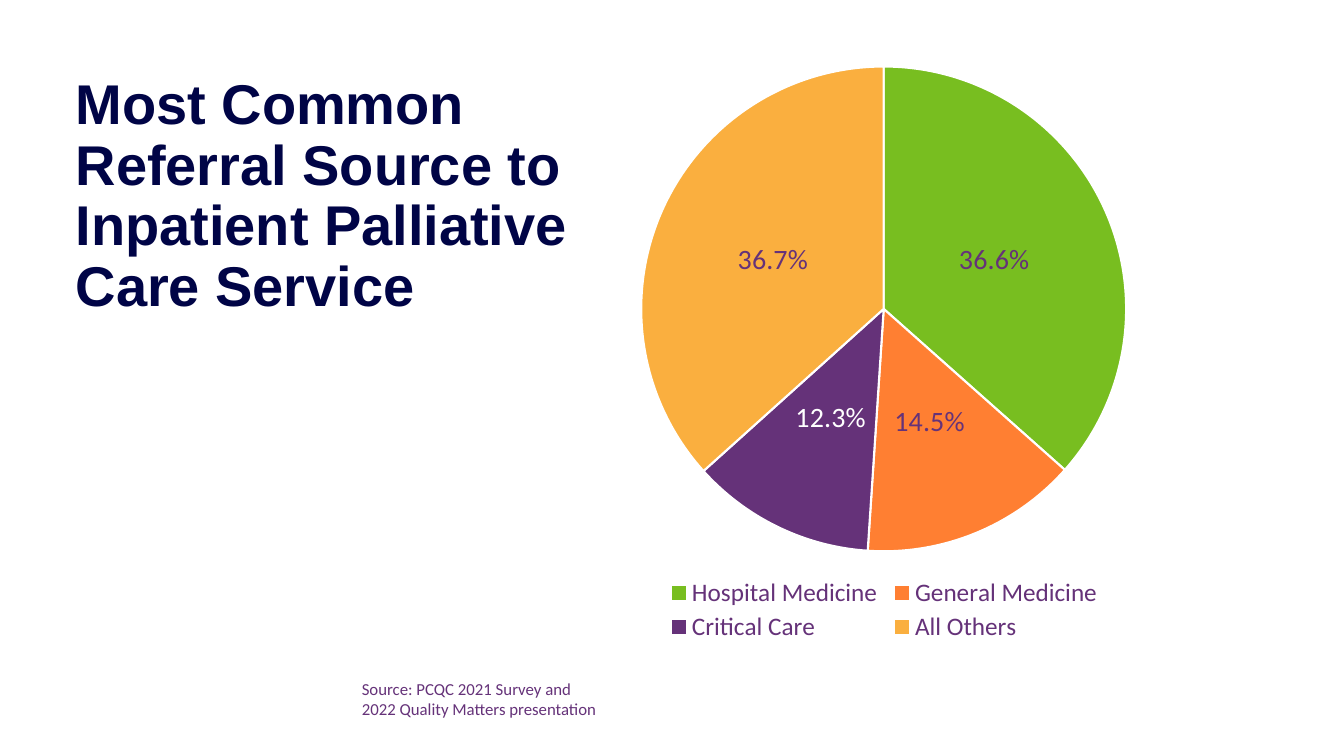
from dataclasses import dataclass

from lxml import etree
from pptx import Presentation
from pptx import util as u
from pptx.chart import data as chart_data
from pptx.dml.color import RGBColor
from pptx.enum import chart as ch
from pptx.enum import text as tx
from pptx.oxml import ns


@dataclass(frozen=True)
class Theme:
    navy: str = "000446"
    purple: str = "653279"
    green: str = "78BE20"
    orange: str = "FF7F32"
    amber: str = "FAAF3F"
    white: str = "FFFFFF"
    heading_font: str = "Arial"
    body_font: str = "Calibri"
    title_size: int = 40
    label_size: int = 20
    legend_size: int = 18
    source_size: int = 12


THEME = Theme()
PERCENT = "0.0%"


@dataclass(frozen=True)
class Referral:
    name: str
    share: float
    color: str
    label_color: str = THEME.purple


@dataclass(frozen=True)
class Area:
    x: float
    y: float
    w: float
    h: float

    def inches(self) -> list:
        return [u.Inches(v) for v in (self.x, self.y, self.w, self.h)]


REFERRALS = [
    Referral("Hospital Medicine", 0.366, THEME.green),
    Referral("General Medicine", 0.145, THEME.orange),
    Referral("Critical Care", 0.123, THEME.purple, THEME.white),
    Referral("All Others", 0.367, THEME.amber),
]
TITLE = "Most Common Referral Source to Inpatient Palliative Care Service"
SOURCE = ["Source: PCQC 2021 Survey and", "2022 Quality Matters presentation"]
TITLE_AREA = Area(0.74, 0.76, 5.5, 2.42)
SOURCE_AREA = Area(3.49, 6.68, 2.56, 0.5)
CHART_AREA = Area(4.32, 0.52, 8.89, 5.93)
PIE_AREA = Area(6.36, 0.66, 4.81, 4.81)
LEGEND_AREA = Area(6.57, 5.7, 4.4, 0.7)


def apply(target, values: dict) -> None:
    for name, value in values.items():
        setattr(target, name, value)


def style_font(font, name: str, size: int, color: str, bold: bool = False) -> None:
    apply(font, {"name": name, "size": u.Pt(size), "bold": bold})
    font.color.rgb = RGBColor.from_string(color)


def place(shape, area: Area) -> None:
    apply(shape, dict(zip(("left", "top", "width", "height"), area.inches())))


def chart_layout(area: Area, inner: bool = False):
    layout = etree.Element(ns.qn("c:layout"))
    manual = etree.SubElement(layout, ns.qn("c:manualLayout"))
    values = {"layoutTarget": "inner"} if inner else {}
    values |= {
        "xMode": "edge",
        "yMode": "edge",
        "x": (area.x - CHART_AREA.x) / CHART_AREA.w,
        "y": (area.y - CHART_AREA.y) / CHART_AREA.h,
        "w": area.w / CHART_AREA.w,
        "h": area.h / CHART_AREA.h,
    }
    for tag, value in values.items():
        etree.SubElement(manual, ns.qn(f"c:{tag}")).set("val", str(value))
    return layout


def add_title(slide) -> None:
    title = slide.shapes.title
    place(title, TITLE_AREA)
    margins = dict.fromkeys(
        ("margin_left", "margin_top", "margin_right", "margin_bottom"), 0
    )
    apply(title.text_frame, margins | {
        "text": TITLE,
        "word_wrap": True,
        "vertical_anchor": tx.MSO_ANCHOR.TOP,
        "auto_size": tx.MSO_AUTO_SIZE.SHAPE_TO_FIT_TEXT,
    })
    heading = title.text_frame.paragraphs[0]
    apply(heading, {"alignment": tx.PP_ALIGN.LEFT, "line_spacing": 0.9})
    heading._p.get_or_add_pPr().set("marL", str(u.Inches(0.01)))
    style_font(heading.font, THEME.heading_font, THEME.title_size, THEME.navy, True)


def add_source(slide) -> None:
    frame = slide.shapes.add_textbox(*SOURCE_AREA.inches()).text_frame
    apply(frame, {
        "text": "\n".join(SOURCE),
        "word_wrap": False,
        "auto_size": tx.MSO_AUTO_SIZE.SHAPE_TO_FIT_TEXT,
    })
    for line in frame.paragraphs:
        style_font(line.font, THEME.body_font, THEME.source_size, THEME.purple)


def color_slice(point, referral: Referral) -> None:
    point.format.fill.solid()
    point.format.fill.fore_color.rgb = RGBColor.from_string(referral.color)
    point.format.line.color.rgb = RGBColor.from_string(THEME.white)
    point.format.line.width = u.Pt(1.5)
    if referral.label_color != THEME.purple:
        label = point.data_label
        style_font(label.font, THEME.body_font, THEME.label_size, referral.label_color)
        label.position = ch.XL_LABEL_POSITION.CENTER
        number_format = etree.Element(ns.qn("c:numFmt"))
        number_format.set("formatCode", PERCENT)
        number_format.set("sourceLinked", "0")
        label._dLbl.find(ns.qn("c:idx")).addnext(number_format)


def add_referral_pie(slide) -> None:
    shares = chart_data.CategoryChartData(number_format=PERCENT)
    shares.categories = [r.name for r in REFERRALS]
    shares.add_series("Series 1", [r.share for r in REFERRALS])
    pie = slide.shapes.add_chart(
        ch.XL_CHART_TYPE.PIE, *CHART_AREA.inches(), shares
    ).chart
    apply(pie, {"has_title": False, "has_legend": True})
    style_font(pie.font, THEME.body_font, THEME.legend_size, THEME.purple)
    apply(pie.legend, {
        "position": ch.XL_LEGEND_POSITION.BOTTOM,
        "include_in_layout": False,
    })
    style_font(pie.legend.font, THEME.body_font, THEME.legend_size, THEME.purple)
    plot = pie.plots[0]
    plot.vary_by_categories = True
    series = plot.series[0]
    labels = series.data_labels
    apply(labels, {
        "show_value": True,
        "show_percentage": False,
        "number_format": PERCENT,
        "number_format_is_linked": False,
        "position": ch.XL_LABEL_POSITION.CENTER,
    })
    style_font(labels.font, THEME.body_font, THEME.label_size, THEME.purple)
    for index, referral in enumerate(REFERRALS):
        color_slice(series.points[index], referral)

    plot_area = pie._chartSpace.chart.plotArea
    for old in plot_area.findall(ns.qn("c:layout")):
        plot_area.remove(old)
    plot_area.insert(0, chart_layout(PIE_AREA, inner=True))
    legend = pie.legend._element
    for old in legend.findall(ns.qn("c:layout")):
        legend.remove(old)
    legend.find(ns.qn("c:legendPos")).addnext(chart_layout(LEGEND_AREA))


def main() -> None:
    deck = Presentation()
    apply(deck, {"slide_width": u.Inches(13.33), "slide_height": u.Inches(7.5)})
    slide = deck.slides.add_slide(deck.slide_layouts.get_by_name("Title Only"))
    add_title(slide)
    add_source(slide)
    add_referral_pie(slide)
    deck.save("out.pptx")


if __name__ == "__main__":
    main()
